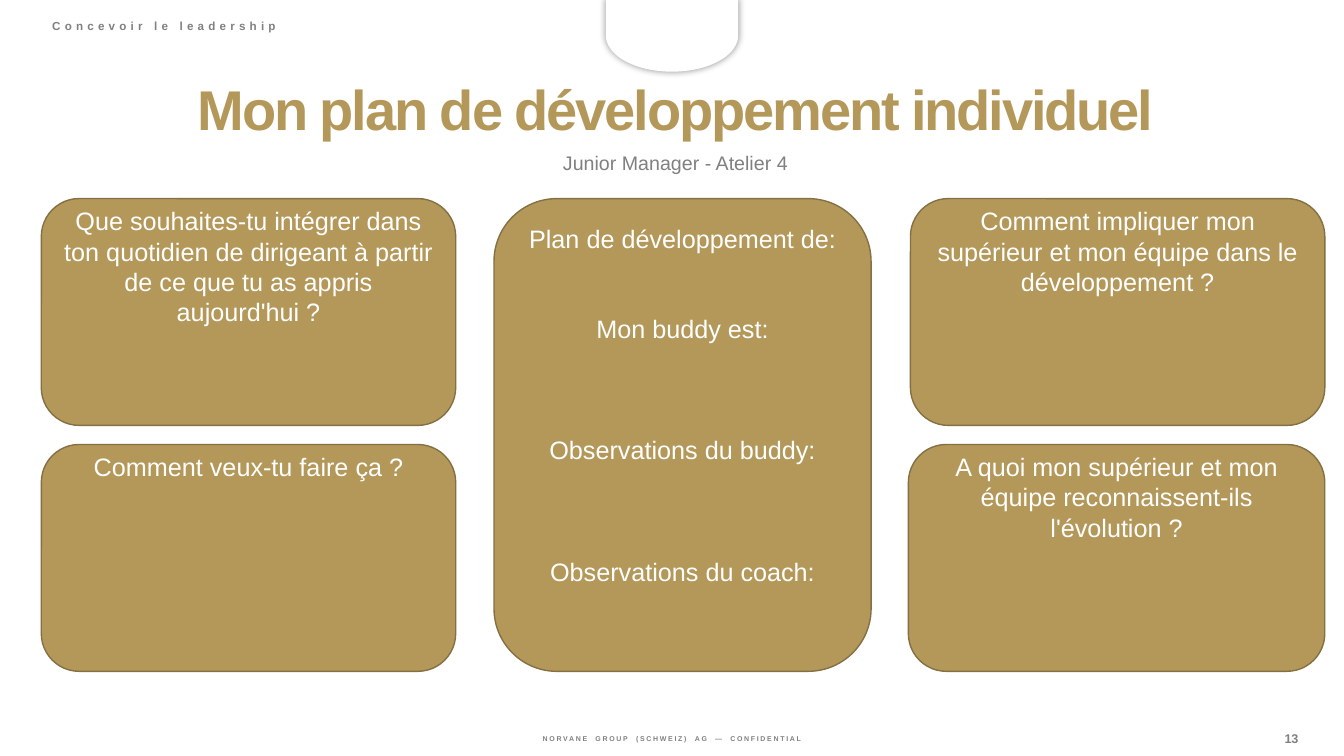
from dataclasses import dataclass
from lxml.etree import SubElement
from pptx import Presentation
from pptx.dml.color import RGBColor as RGB
from pptx.enum.shapes import MSO_SHAPE as Kind
from pptx.enum.text import MSO_ANCHOR as Anchor, PP_ALIGN as Align
from pptx.oxml.ns import qn
from pptx.util import Inches, Pt


@dataclass(frozen=True)
class Theme:
    face: str = "Arial"
    gold: RGB = RGB(0xB3, 0x98, 0x5A)
    edge: RGB = RGB(0x84, 0x70, 0x43)
    gray: RGB = RGB(0x80, 0x80, 0x80)
    white: RGB = RGB(0xFF, 0xFF, 0xFF)
    title: float = 40
    body: float = 18
    sub: float = 14
    page: float = 9
    head: float = 8.3
    foot: float = 5


THEME = Theme()


def add_run(para, text, size, color, bold=False, track=0):
    run = para.add_run()
    run.text = text
    font = run.font
    font.name, font.size, font.bold = THEME.face, Pt(size), bold
    font.color.rgb = color
    if track:
        run._r.get_or_add_rPr().set("spc", str(round(track * 100)))


def add_label(slide, area, runs, size, color=THEME.gray, bold=False,
              align=Align.CENTER, lead=1, anchor=Anchor.TOP, tight=False):
    box = slide.shapes.add_textbox(*map(Inches, area))
    frame = box.text_frame
    frame.word_wrap = True
    frame.vertical_anchor = anchor
    if tight:
        frame.margin_left = frame.margin_right = frame.margin_bottom = 0
        frame.margin_top = Inches(0.01)
    para = frame.paragraphs[0]
    para.alignment = align
    para.line_spacing = lead
    for text, track in runs:
        add_run(para, text, size, color, bold, track)


def add_shape(slide, kind, area, fill, line):
    shape = slide.shapes.add_shape(kind, *map(Inches, area))
    shape.shadow.inherit = False
    shape.fill.solid()
    shape.fill.fore_color.rgb = fill
    shape.line.color.rgb = line
    shape.line.width = Pt(1)
    return shape


def add_card(slide, area, items, inset=-0.04):
    card = add_shape(slide, Kind.ROUNDED_RECTANGLE, area, THEME.gold, THEME.edge)
    frame = card.text_frame
    frame.word_wrap = True
    frame.vertical_anchor = Anchor.TOP
    frame.margin_top = Inches(inset)
    for i, (text, gap) in enumerate(items):
        para = frame.add_paragraph() if i else frame.paragraphs[0]
        para.alignment = Align.CENTER
        if gap:
            para.space_before = Pt(gap)
        add_run(para, text, THEME.body, THEME.white)


def add_tab(slide):
    tab = add_shape(slide, Kind.FLOWCHART_DELAY, (6.31, -0.3, 0.71, 1.3),
                    THEME.white, THEME.white)
    tab.rotation = 90
    glow = SubElement(tab._element.spPr.find(qn("a:effectLst")),
                      qn("a:outerShdw"), blurRad=str(Pt(5)), dist="0")
    black = SubElement(glow, qn("a:srgbClr"), val="000000")
    SubElement(black, qn("a:alpha"), val="40000")


def add_foot(slide):
    words = "NORVANE GROUP (SCHWEIZ) AG — CONFIDENTIAL".split()
    runs = [(words[0], 1.2)]
    for word in words[1:]:
        runs += [(" ", 3.2), (word, 1.2)]
    add_label(slide, (4.13, 7.28, 5.07, 0.1), runs, THEME.foot,
              bold=True, tight=True)


def main():
    deck = Presentation()
    deck.slide_width, deck.slide_height = Inches(13.33), Inches(7.5)
    slide = deck.slides.add_slide(deck.slide_layouts[6])

    add_foot(slide)
    add_tab(slide)
    add_label(slide, (12.43, 7.24, 0.76, 0.16), [("13", -0.1)], THEME.page,
              bold=True, tight=True)
    add_label(slide, (0.41, 1.49, 12.58, 0.31),
              [("Junior Manager - Atelier 4", 0)], THEME.sub, lead=0.8)
    add_label(slide, (0.41, 0.76, 12.58, 0.71),
              [("Mon plan de développement individuel", -1.5)], THEME.title,
              THEME.gold, bold=True, lead=0.9, anchor=Anchor.MIDDLE)
    add_label(slide, (0.42, 0.17, 4.87, 0.21),
              [("Concevoir le leadership", 3)], THEME.head, bold=True,
              align=Align.LEFT, lead=0.8)

    top, low, wide, high = 1.97, 4.41, 4.11, 2.25
    cards = [
        (0.41, top, wide, "Que souhaites-tu intégrer dans ton quotidien de "
         "dirigeant à partir de ce que tu as appris aujourd'hui ?"),
        (0.41, low, wide, "Comment veux-tu faire ça ?"),
        (9.03, top, wide, "Comment impliquer mon supérieur et mon équipe "
         "dans le développement ?"),
        (9.01, low, 4.13, "A quoi mon supérieur et mon équipe "
         "reconnaissent-ils l'évolution ?"),
    ]
    for left, y, width, text in cards:
        add_card(slide, (left, y, width, high), [(text, 0)])

    plan = [("Plan de développement de:", 0), ("Mon buddy est:", 43),
            ("Observations du buddy:", 65), ("Observations du coach:", 65)]
    add_card(slide, (4.9, top, 3.74, low + high - top), plan, inset=0.06)

    deck.save("out.pptx")


if __name__ == "__main__":
    main()
